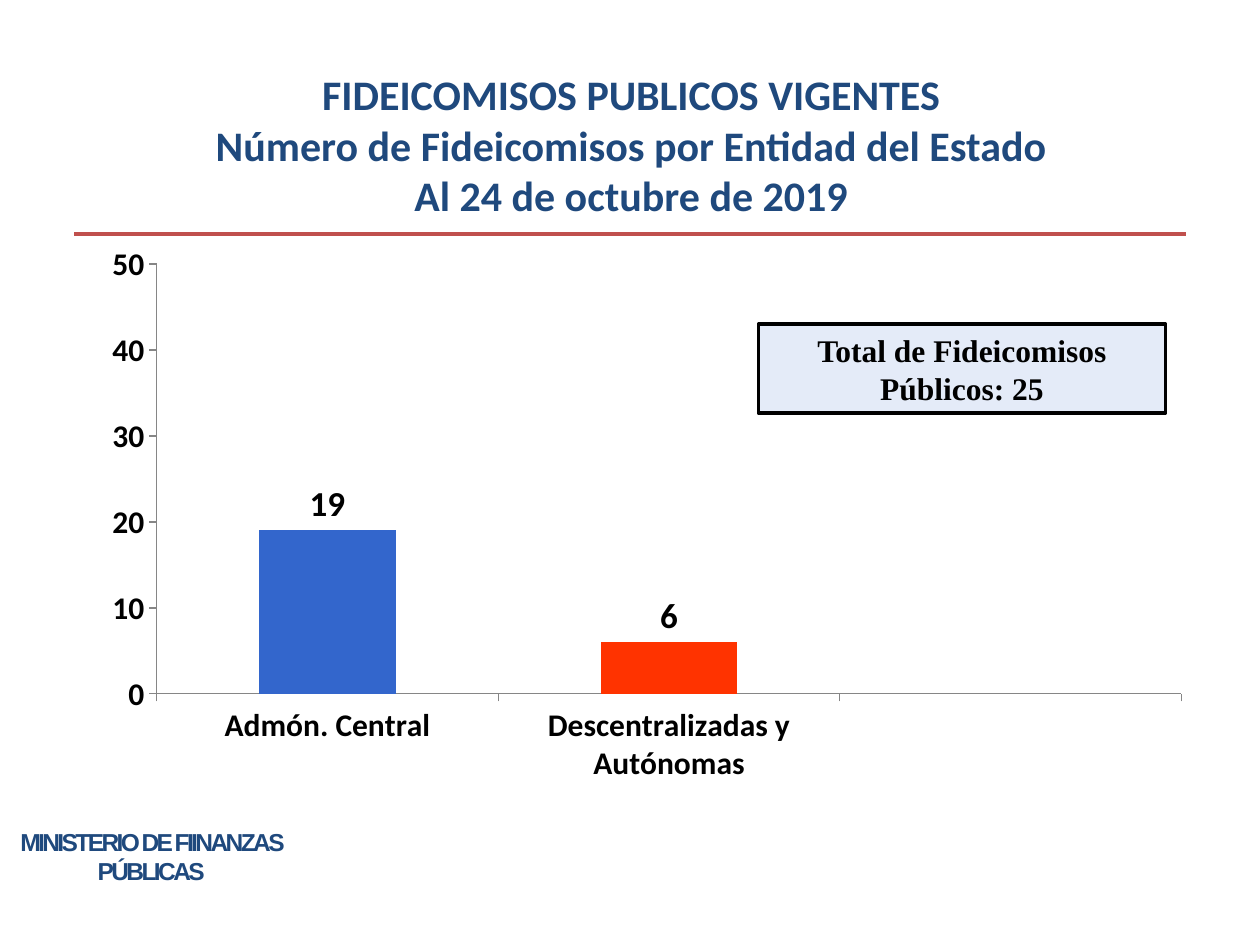
from lxml import etree
from pptx import Presentation
from pptx.chart.data import CategoryChartData
from pptx.dml.color import RGBColor
from pptx.enum.chart import XL_CHART_TYPE, XL_LABEL_POSITION, XL_TICK_MARK
from pptx.enum.shapes import MSO_CONNECTOR, MSO_SHAPE
from pptx.enum.text import MSO_ANCHOR, PP_ALIGN
from pptx.oxml import parse_xml
from pptx.oxml.ns import nsdecls, qn
from pptx.util import Inches, Pt

NAVY = RGBColor(0x1F, 0x49, 0x7D)
RULE_RED = RGBColor(0xC0, 0x50, 0x4D)
BLACK = RGBColor(0, 0, 0)
AXIS_GREY = RGBColor(0x86, 0x86, 0x86)
BAR_EDGE = RGBColor(0x31, 0x72, 0xC4)
SERIES_BLUE = RGBColor(0x4F, 0x81, 0xBD)
PALE_BLUE = RGBColor(0xE4, 0xEB, 0xF8)
BAR_COLOURS = [RGBColor(0x33, 0x66, 0xCC), RGBColor(0xFF, 0x33, 0x00)]


def box(left, top, width, height):
    return [Inches(v) for v in (left, top, width, height)]


def write(shape, text, font_name, size, colour):
    """Fill a shape with one bold, centred, vertically centred paragraph."""
    frame = shape.text_frame
    frame.word_wrap = True
    frame.vertical_anchor = MSO_ANCHOR.MIDDLE
    frame.text = text
    paragraph = frame.paragraphs[0]
    paragraph.alignment = PP_ALIGN.CENTER
    font = paragraph.font
    font.name, font.size, font.bold = font_name, Pt(size), True
    font.color.rgb = colour
    return paragraph


def add_title(slide, text):
    title = slide.shapes.title
    title.left, title.top, title.width, title.height = box(0.51, 0.52, 9, 1.25)
    write(title, text, "Calibri", 24, NAVY)


def add_rule(slide):
    rule = slide.shapes.add_connector(
        MSO_CONNECTOR.STRAIGHT, Inches(0.59), Inches(1.86), Inches(9.41), Inches(1.86))
    rule.line.color.rgb = RULE_RED
    rule.line.width = Pt(2.25)
    etree.SubElement(rule._element.spPr, qn("a:effectLst"))


def place_plot(chart, x, y, width, height):
    """Fix the inner plot area as fractions of the chart."""
    plot_area = chart._chartSpace.chart.plotArea
    for automatic in plot_area.findall(qn("c:layout")):
        plot_area.remove(automatic)
    settings = [("layoutTarget", "inner"), ("xMode", "edge"), ("yMode", "edge"),
                ("x", x), ("y", y), ("w", width), ("h", height)]
    marks = "".join(f'<c:{tag} val="{value}"/>' for tag, value in settings)
    plot_area.insert(0, parse_xml(
        f'<c:layout {nsdecls("c")}><c:manualLayout>{marks}</c:manualLayout></c:layout>'))


def format_axis(axis):
    axis.has_major_gridlines = False
    axis.major_tick_mark = XL_TICK_MARK.OUTSIDE
    axis.minor_tick_mark = XL_TICK_MARK.NONE
    axis.format.line.color.rgb = AXIS_GREY
    font = axis.tick_labels.font
    font.name, font.size, font.bold = "Calibri", Pt(18), True
    font.color.rgb = BLACK


def add_trust_chart(slide):
    data = CategoryChartData()
    # The third place on the axis stays empty
    data.categories = ["Admón. Central", "Descentralizadas y Autónomas", ""]
    data.add_series("Series 1", [19, 6, None])
    chart = slide.shapes.add_chart(
        XL_CHART_TYPE.COLUMN_CLUSTERED, *box(0.44, 1.82, 8.94, 4.61), data).chart
    chart.has_legend = False
    chart.has_title = False
    chart.font.name, chart.font.size = "Calibri", Pt(18)
    chart.font.color.rgb = BLACK
    place_plot(chart, 0.09, 0.06, 0.91, 0.74)

    # Axes
    format_axis(chart.category_axis)
    counts = chart.value_axis
    format_axis(counts)
    counts.minimum_scale, counts.maximum_scale, counts.major_unit = 0, 50, 10

    # Columns
    plot = chart.plots[0]
    plot.gap_width = 150
    plot.vary_by_categories = False
    trusts = plot.series[0]
    trusts.format.fill.solid()
    trusts.format.fill.fore_color.rgb = SERIES_BLUE
    trusts.format.line.color.rgb = BAR_EDGE
    trusts.format.line.width = Pt(0.75)
    for index, colour in enumerate(BAR_COLOURS):
        fill = trusts.points[index].format.fill
        fill.solid()
        fill.fore_color.rgb = colour

    # Value labels
    labels = trusts.data_labels
    labels.show_value = True
    labels.position = XL_LABEL_POSITION.OUTSIDE_END
    labels.font.name, labels.font.size, labels.font.bold = "Calibri", Pt(20), True
    labels.font.color.rgb = BLACK


def add_ministry(slide):
    ministry = slide.shapes.add_textbox(*box(0, 6.51, 2.4, 0.57))
    paragraph = write(ministry, "MINISTERIO DE FIINANZAS PÚBLICAS", "Arial", 14, NAVY)
    # Tight letter spacing, in hundredths of a point
    paragraph.runs[0].font._element.set("spc", "-150")


def add_total(slide):
    total = slide.shapes.add_shape(MSO_SHAPE.RECTANGLE, *box(6.02, 2.57, 3.23, 0.71))
    total.shadow.inherit = False
    total.fill.solid()
    total.fill.fore_color.rgb = PALE_BLUE
    total.line.color.rgb = BLACK
    total.line.width = Pt(2)
    write(total, "Total de Fideicomisos Públicos: 25", "Times New Roman", 18, BLACK)


def main():
    deck = Presentation()
    deck.slide_width, deck.slide_height = Inches(10), Inches(7.5)
    slide = deck.slides.add_slide(deck.slide_layouts[5])
    add_title(slide, "FIDEICOMISOS PUBLICOS VIGENTES\v"
                     "Número de Fideicomisos por Entidad del Estado\v"
                     "Al 24 de octubre de 2019")
    add_rule(slide)
    add_trust_chart(slide)
    add_ministry(slide)
    add_total(slide)
    deck.save("out.pptx")


if __name__ == "__main__":
    main()
